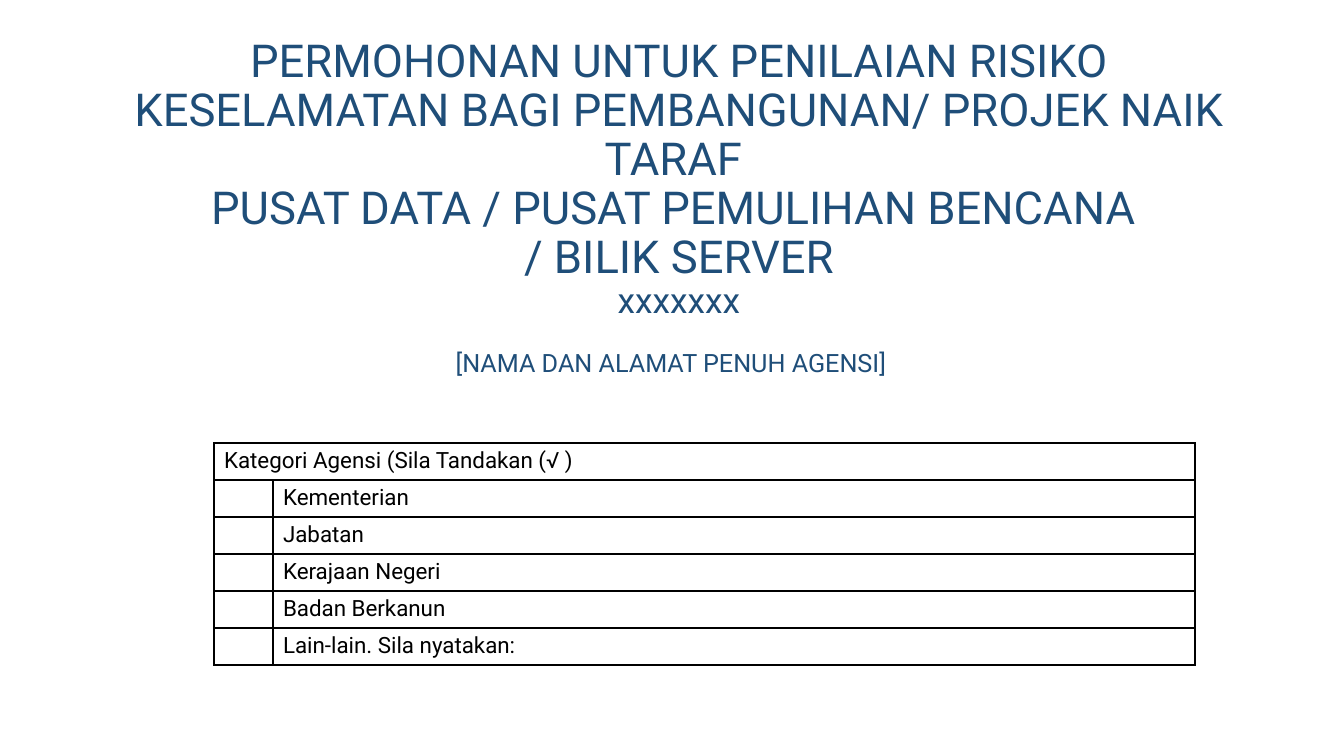
from lxml.etree import SubElement
from pptx import Presentation
from pptx.dml.color import RGBColor
from pptx.enum.text import MSO_ANCHOR, PP_ALIGN
from pptx.oxml.ns import qn
from pptx.util import Emu, Pt

TITLE = (
    "PERMOHONAN UNTUK PENILAIAN RISIKO KESELAMATAN BAGI PEMBANGUNAN/ PROJEK NAIK TARAF \v"
    "PUSAT DATA / PUSAT PEMULIHAN BENCANA \v"
    "/ BILIK SERVER\v"
    "xxxxxxx"
)
AGENCY = "[NAMA DAN ALAMAT PENUH AGENSI]"
CATEGORY_HEADING = "Kategori Agensi (Sila Tandakan (√ )"
CATEGORIES = [
    "Kementerian",
    "Jabatan",
    "Kerajaan Negeri",
    "Badan Berkanun",
    "Lain-lain. Sila nyatakan:",
]


def px(length):
    return Emu(round(length * 914400 / 100.8))


def color(value):
    return RGBColor.from_string(value)


class FormSlide:
    font_name = "Roboto"
    heading_color = "1F4E79"
    table_color = "000000"
    table_size = 16

    def __init__(self, presentation):
        self.slide = presentation.slides.add_slide(presentation.slide_layouts[6])

    def format_run(self, run, size, font_color):
        run.font.name = self.font_name
        run.font.size = Pt(size)
        run.font.color.rgb = color(font_color)

    def heading(self, left, top, width, height, text, size, anchor):
        shape = self.slide.shapes.add_textbox(px(left), px(top), px(width), px(height))
        text_frame = shape.text_frame
        text_frame.word_wrap = True
        text_frame.vertical_anchor = anchor
        paragraph = text_frame.paragraphs[0]
        paragraph.text = text
        paragraph.alignment = PP_ALIGN.CENTER
        paragraph.line_spacing = 0.9
        for run in paragraph.runs:
            self.format_run(run, size, self.heading_color)
        return paragraph

    def border(self, cell):
        properties = cell._tc.get_or_add_tcPr()
        for side in ("a:lnL", "a:lnR", "a:lnT", "a:lnB"):
            line = SubElement(properties, qn(side), w=str(Pt(1)))
            fill = SubElement(line, qn("a:solidFill"))
            SubElement(fill, qn("a:srgbClr"), val=self.table_color)

    def cell(self, cell, text):
        self.border(cell)
        cell.fill.background()
        paragraph = cell.text_frame.paragraphs[0]
        paragraph.text = text
        for run in paragraph.runs:
            self.format_run(run, self.table_size, self.table_color)
        if not text:
            ending = SubElement(paragraph._p, qn("a:endParaRPr"), sz=str(self.table_size * 100))
            SubElement(ending, qn("a:latin"), typeface=self.font_name)

    def checklist(self, left, top, column_widths, row_height, heading, options):
        rows = [(heading, "")] + [("", option) for option in options]
        frame = self.slide.shapes.add_table(
            len(rows), len(column_widths), px(left), px(top),
            px(sum(column_widths)), px(row_height * len(rows)),
        )
        table = frame.table
        table.first_row = False
        table.horz_banding = False
        for column, width in zip(table.columns, column_widths):
            column.width = px(width)
        for row, texts in zip(table.rows, rows):
            row.height = px(row_height)
            for cell, text in zip(row.cells, texts):
                self.cell(cell, text)
        table.cell(0, 0).merge(table.cell(0, len(column_widths) - 1))


def main():
    presentation = Presentation()
    presentation.slide_width = px(1344)
    presentation.slide_height = px(756)
    form = FormSlide(presentation)
    title = form.heading(91, 113, 1176, 213, TITLE, 32.4, MSO_ANCHOR.BOTTOM)
    title.runs[-1].font.size = Pt(25.2)
    agency = form.heading(172, 346, 998, 65, AGENCY, 18, MSO_ANCHOR.TOP)
    agency.space_before = Pt(10)
    form.checklist(214, 443, (59, 922), 36, CATEGORY_HEADING, CATEGORIES)
    presentation.save("out.pptx")


if __name__ == "__main__":
    main()
